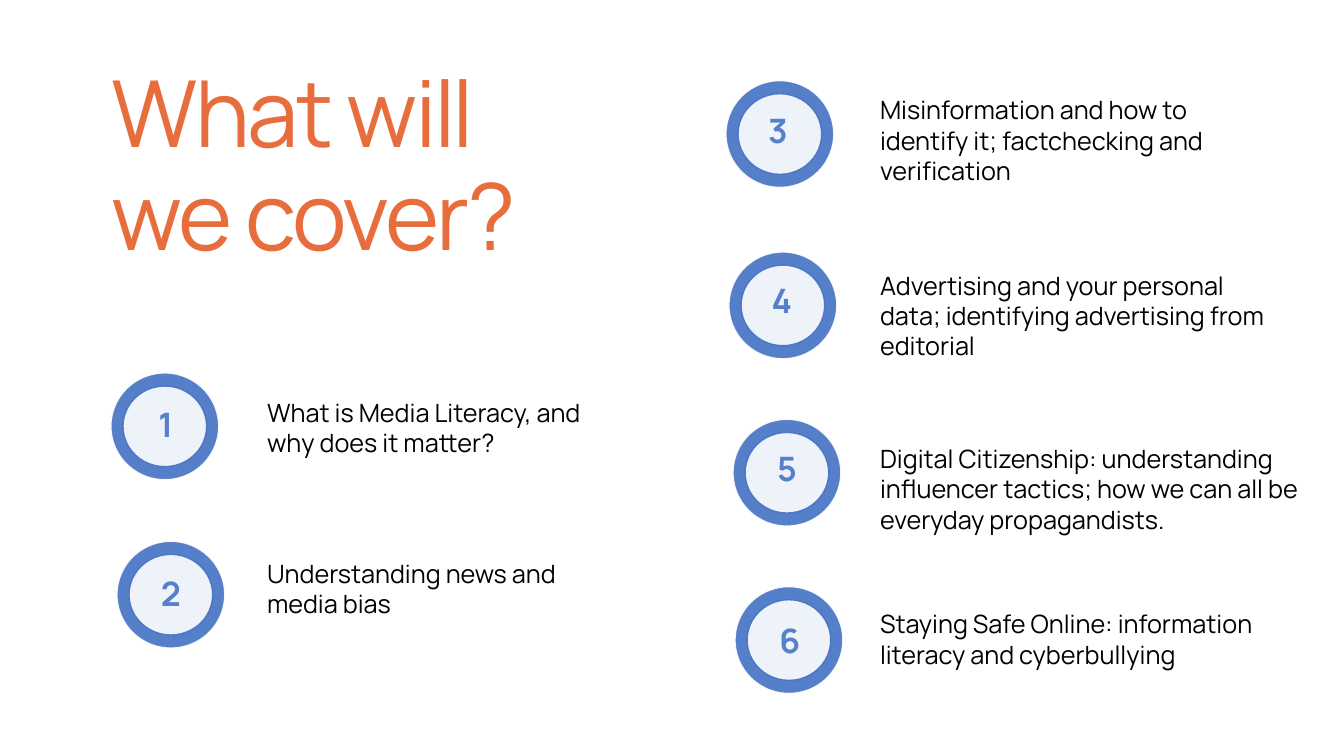
from pptx import Presentation
from pptx import util as u
from pptx.dml.color import RGBColor
from pptx.enum import shapes, text
from pptx.oxml.ns import qn
from lxml import etree

BLUE, WHITE = "4472C4", "FFFFFF"
RING_SIZE = (1.07, 1.06)
HOLE_OFFSET, HOLE_SIZE = (0.12, 0.13), (0.83, 0.8)
NUMBER_SIZE = (0.87, 0.5)

TOPICS = [
    ((1.1, 3.7), (1.21, 3.96), (2.55, 3.89, 3.69, 0.71),
     "What is Media Literacy, and why does it matter?"),
    ((1.16, 5.37), (1.26, 5.63), (2.55, 5.49, 3.69, 0.71),
     "Understanding news and media bias"),
    ((7.2, 0.8), (7.28, 1.04), (8.63, 0.89, 4.11, 1.01),
     "Misinformation and how to identify it; factchecking and verification"),
    ((7.23, 2.5), (7.32, 2.73), (8.63, 2.63, 4.11, 1.01),
     "Advertising and your personal data; identifying advertising from editorial"),
    ((7.27, 4.16), (7.37, 4.39), (8.63, 4.35, 4.52, 1.01),
     "Digital Citizenship: understanding influencer tactics; "
     "how we can all be everyday propagandists."),
    ((7.29, 5.82), (7.4, 6.1), (8.63, 5.99, 4.16, 0.71),
     "Staying Safe Online: information literacy and cyberbullying"),
]


def rgb(value):
    return RGBColor.from_string(value)


def inches(*lengths):
    return [u.Inches(length) for length in lengths]


def apply(target, values):
    for name, value in values.items():
        setattr(target, name, value)


class Agenda:
    font = "Manrope"
    heading = {"size": u.Pt(66), "bold": False}
    number = {"size": u.Pt(24), "bold": True}
    body = {"size": u.Pt(18), "bold": False}

    def __init__(self, slide):
        self.slide = slide

    def fill_text(self, frame, words, style, color, align):
        apply(frame, {"word_wrap": True, "auto_size": text.MSO_AUTO_SIZE.NONE,
                      "vertical_anchor": text.MSO_ANCHOR.TOP})
        line = frame.paragraphs[0]
        line.alignment = align
        run = line.add_run()
        run.text = words
        apply(run.font, {"name": self.font, **style})
        run.font.color.rgb = rgb(color)
        return line

    def title(self, box, words):
        title = self.slide.shapes.title
        apply(title, dict(zip(("left", "top", "width", "height"), inches(*box))))
        line = self.fill_text(title.text_frame, words, self.heading, "E76E3C",
                              text.PP_ALIGN.LEFT)
        line.line_spacing = u.Pt(73.9)
        line.runs[0]._r.get_or_add_rPr().set("spc", "-190")

    def label(self, box, words, style, color, align=text.PP_ALIGN.LEFT):
        frame = self.slide.shapes.add_textbox(*inches(*box)).text_frame
        self.fill_text(frame, words, style, color, align)

    def disc(self, box, fill, outline):
        disc = self.slide.shapes.add_shape(shapes.MSO_SHAPE.OVAL, *inches(*box))
        disc.shadow.inherit = False
        disc.fill.solid()
        disc.fill.fore_color.rgb = rgb(fill)
        disc.line.color.rgb = rgb(outline)
        disc.line.width = u.Pt(1)
        for color in disc._element.spPr.iter(qn("a:srgbClr")):
            etree.SubElement(color, qn("a:alpha"), val="90000")

    def ring(self, left, top):
        self.disc((left, top, *RING_SIZE), BLUE, WHITE)
        dx, dy = HOLE_OFFSET
        self.disc((left + dx, top + dy, *HOLE_SIZE), WHITE, BLUE)


def main():
    deck = Presentation()
    deck.slide_width, deck.slide_height = inches(13.33, 7.5)
    agenda = Agenda(deck.slides.add_slide(deck.slide_layouts[5]))
    agenda.title((1.01, 0.57, 4.35, 2.18), "What will we cover?")
    for count, (ring, number, box, topic) in enumerate(TOPICS, 1):
        agenda.ring(*ring)
        agenda.label((*number, *NUMBER_SIZE), str(count), agenda.number,
                     "5680CA", text.PP_ALIGN.CENTER)
        agenda.label(box, topic, agenda.body, "000000")
    deck.save("out.pptx")


if __name__ == "__main__":
    main()
